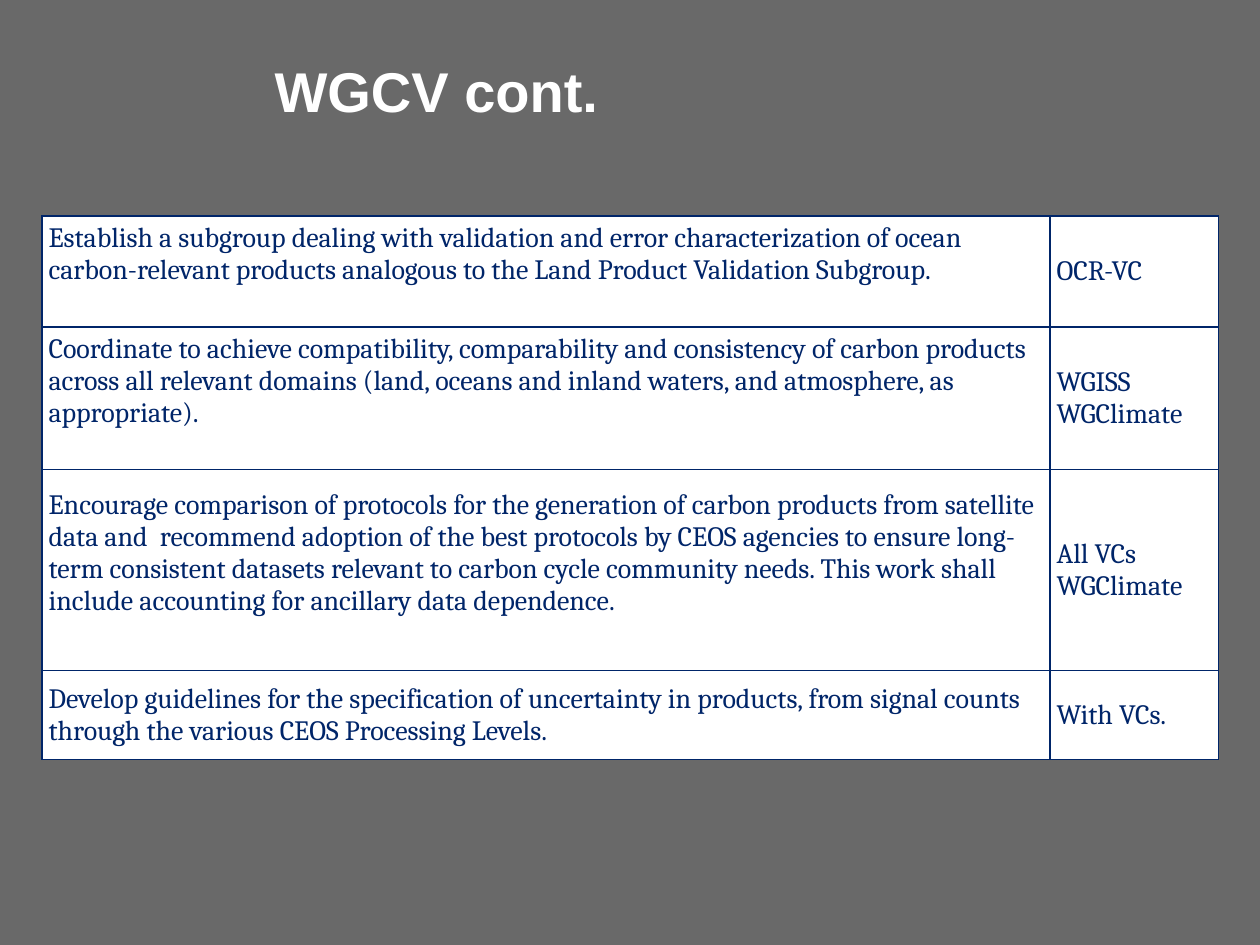
from lxml.etree import SubElement
from pptx import Presentation
from pptx.dml.color import RGBColor
from pptx.enum.text import MSO_ANCHOR, PP_ALIGN
from pptx.oxml.ns import qn
from pptx.util import Cm, Pt

ACTIONS = [
    (2.24, 0.8,
     "Establish a subgroup dealing with validation and error characterization of ocean "
     "carbon-relevant products analogous to the Land Product Validation Subgroup.",
     "OCR-VC"),
    (2.87, 0.8,
     "Coordinate to achieve compatibility, comparability and consistency of carbon products "
     "across all relevant domains (land, oceans and inland waters, and atmosphere, as "
     "appropriate).",
     "WGISS\vWGClimate"),
    (4.05, 0.8,
     "Encourage comparison of protocols for the generation of carbon products from satellite "
     "data and  recommend adoption of the best protocols by CEOS agencies to ensure long-term "
     "consistent datasets relevant to carbon cycle community needs. This work shall include "
     "accounting for ancillary data dependence.",
     "All VCs\vWGClimate"),
    (1.8, 0.13,
     "Develop guidelines for the specification of uncertainty in products, from signal counts "
     "through the various CEOS Processing Levels.",
     "With VCs."),
]


def color(code):
    return RGBColor.from_string(code)


class ActionSlide:
    background = "696969"
    paper = "FFFFFF"
    ink = "002569"
    heading_font = "Arial"
    body_font = "Cambria"
    inset = Cm(0.13)

    def __init__(self, deck):
        self.slide = deck.slides.add_slide(deck.slide_layouts[5])
        fill = self.slide.background.fill
        fill.solid()
        fill.fore_color.rgb = color(self.background)

    def style(self, paragraph, family, size, code, bold=False):
        paragraph.alignment = PP_ALIGN.LEFT
        font = paragraph.font
        font.name = family
        font.size = Pt(size)
        font.bold = bold
        font.color.rgb = color(code)

    def title(self, wording, left, top, width, height):
        heading = self.slide.shapes.title
        heading.left, heading.top = Cm(left), Cm(top)
        heading.width, heading.height = Cm(width), Cm(height)
        frame = heading.text_frame
        frame.text = wording
        frame.vertical_anchor = MSO_ANCHOR.TOP
        frame.margin_top = Cm(0.25)
        self.style(frame.paragraphs[0], self.heading_font, 32, self.paper, True)

    def borders(self, cell):
        properties = cell._tc.get_or_add_tcPr()
        for side in ("a:lnL", "a:lnR", "a:lnT", "a:lnB"):
            line = SubElement(properties, qn(side), w=str(Pt(1)))
            fill = SubElement(line, qn("a:solidFill"))
            SubElement(fill, qn("a:srgbClr"), val=self.ink)

    def cell(self, cell, wording, bottom):
        self.borders(cell)
        cell.fill.solid()
        cell.fill.fore_color.rgb = color(self.paper)
        cell.vertical_anchor = MSO_ANCHOR.MIDDLE
        cell.margin_left = cell.margin_right = cell.margin_top = self.inset
        cell.margin_bottom = bottom
        cell.text_frame.text = wording
        self.style(cell.text_frame.paragraphs[0], self.body_font, 16, self.ink)

    def table(self, actions, left, top, widths):
        height = sum(action[0] for action in actions)
        table = self.slide.shapes.add_table(
            len(actions), len(widths), Cm(left), Cm(top), Cm(sum(widths)), Cm(height)).table
        table.first_row = table.horz_banding = False
        for column, width in zip(table.columns, widths):
            column.width = Cm(width)
        for row, (row_height, bottom, task, partners) in zip(table.rows, actions):
            row.height = Cm(row_height)
            self.cell(row.cells[0], task, Cm(bottom))
            self.cell(row.cells[1], partners, self.inset)


def main():
    deck = Presentation()
    deck.slide_width, deck.slide_height = Cm(25.4), Cm(19.05)
    page = ActionSlide(deck)
    page.title("WGCV cont.", 5.28, 0.89, 15.44, 2.92)
    page.table(ACTIONS, 0.85, 4.35, (20.32, 3.39))
    deck.save("out.pptx")


if __name__ == "__main__":
    main()
